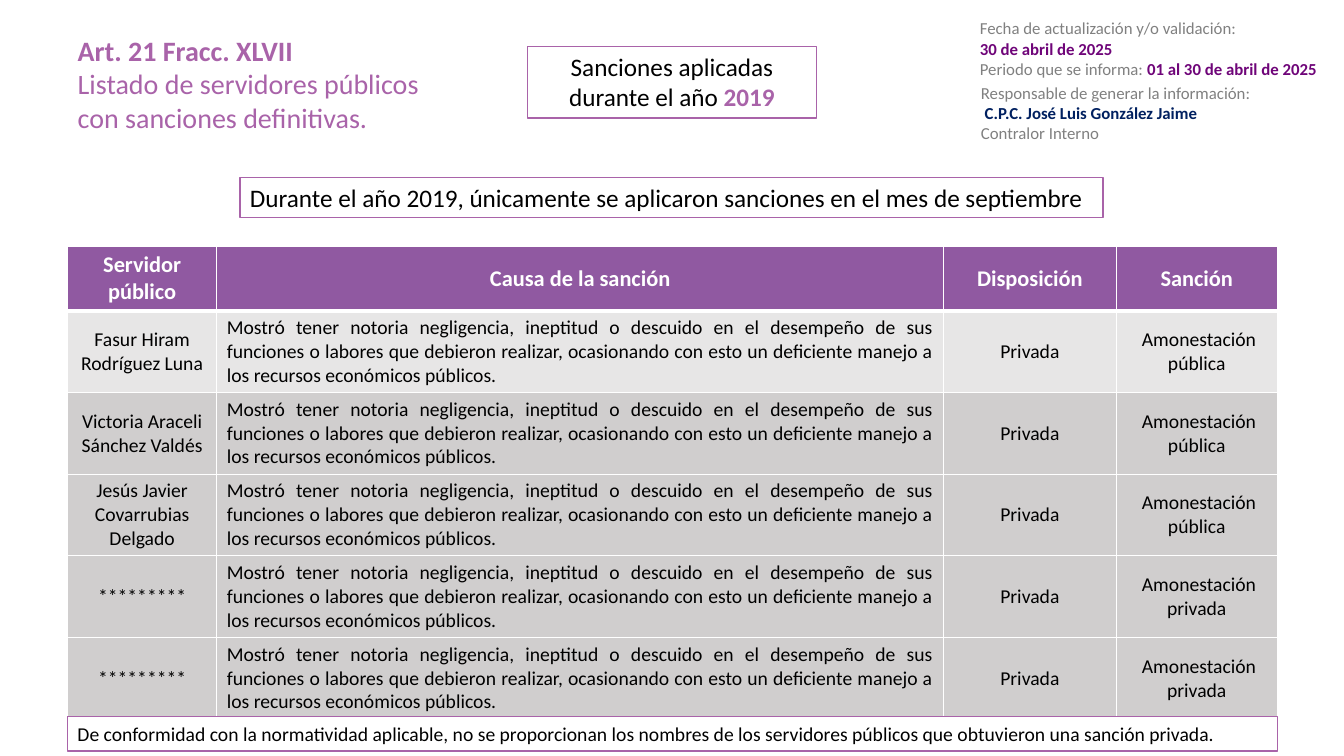
"""Builds the slide that lists the sanctions applied to public servants in 2019."""
from dataclasses import dataclass

from lxml.etree import SubElement as Sub
from pptx import Presentation
from pptx.dml.color import RGBColor as RGB
from pptx.enum.shapes import MSO_SHAPE as Shape
from pptx.enum.text import MSO_ANCHOR as Anchor, MSO_AUTO_SIZE as Auto, PP_ALIGN as Align
from pptx.oxml.ns import qn
from pptx.util import Inches, Pt


@dataclass(frozen=True)
class Theme:
    """Colours, type sizes and font of the slide."""
    font: str = "Calibri"
    white: str = "FFFFFF"
    black: str = "000000"
    mauve: str = "A963A9"
    head: str = "9059A1"
    pale: str = "E7E6E6"
    mid: str = "D0CECE"
    gray: str = "808080"
    plum: str = "6F0579"
    navy: str = "002060"
    title: int = 20
    lead: int = 18
    label: int = 16
    body: int = 14
    small: int = 12


T = Theme()

TITLE = [
    [("Art. 21 Fracc. XLVII", T.mauve, True)],
    [("Listado de servidores públicos con sanciones definitivas.", T.mauve, False)],
]
BOXES = [
    ((2.38, 1.76, 8.56, 0.4), T.lead, Align.LEFT, [[
        ("Durante el año 2019, únicamente se aplicaron sanciones en el mes de septiembre",
         T.black, False)]]),
    ((0.67, 7.11, 12, 0.34), T.body, Align.LEFT, [[
        ("De conformidad con la normatividad aplicable, no se proporcionan los nombres de "
         "los servidores públicos que obtuvieron una sanción privada.", T.black, False)]]),
    ((5.23, 0.46, 2.87, 0.71), T.lead, Align.CENTER, [[
        ("Sanciones aplicadas durante el año ", T.black, False), ("2019", T.mauve, True)]]),
]
NOTES = [
    ((9.62, 0.13, 3.59, 0.71), False, [
        [("Fecha de actualización y/o validación:", T.gray, False)],
        [("30 de abril de 2025", T.plum, True)],
        [("Periodo que se informa: ", T.gray, False),
         ("01 al 30 de abril de 2025", T.plum, True)]]),
    ((9.63, 0.77, 3.11, 1.54), True, [
        [("Responsable de generar la información:", T.gray, False)],
        [(" ", T.gray, False), ("C.P.C. José Luis González Jaime", T.navy, True)],
        [("Contralor Interno", T.gray, False)]]),
]
HEADS = ["Servidor público", "Causa de la sanción", "Disposición", "Sanción"]
CAUSE = ("Mostró tener notoria negligencia, ineptitud o descuido en el desempeño de sus "
         "funciones o labores que debieron realizar, ocasionando con esto un deficiente "
         "manejo a los recursos económicos públicos.")
CASES = [
    ("Fasur Hiram Rodríguez Luna", "pública"),
    ("Victoria Araceli Sánchez Valdés", "pública"),
    ("Jesús Javier Covarrubias Delgado", "pública"),
    ("*********", "privada"),
    ("*********", "privada"),
]
GRID = (0.67, 2.44, 12, 4.64)
WIDTHS = [1.48, 7.21, 1.71, 1.6]
HEIGHTS = [0.64] + [0.8] * len(CASES)


def apply(obj, form):
    for name, value in form.items():
        setattr(obj, name, value)


def place(box):
    return [Inches(x) for x in box]


def paint(fill, tone):
    fill.solid()
    fill.fore_color.rgb = RGB.from_string(tone)


def write(frame, paras, size, align=Align.LEFT, **form):
    apply(frame, form)
    for i, runs in enumerate(paras):
        para = frame.add_paragraph() if i else frame.paragraphs[0]
        para.alignment = align
        for text, tone, bold in runs:
            run = para.add_run()
            run.text = text
            apply(run.font, {"name": T.font, "size": Pt(size), "bold": bold})
            run.font.color.rgb = RGB.from_string(tone)


def edge(cell, sides):
    props = cell._tc.get_or_add_tcPr()
    for side, width in sides.items():
        line = Sub(props, qn(f"a:ln{side}"), w=str(Pt(width)))
        Sub(Sub(line, qn("a:solidFill")), qn("a:srgbClr"), val=T.white)


def add_title(slide):
    title = slide.shapes.title
    apply(title, dict(zip(("left", "top", "width", "height"), place((0.67, 0.28, 3.85, 1.45)))))
    write(title.text_frame, TITLE, T.title, vertical_anchor=Anchor.TOP,
          auto_size=Auto.NONE, word_wrap=True)


def add_grid(slide):
    table = slide.shapes.add_table(len(HEIGHTS), len(WIDTHS), *place(GRID)).table
    for col, width in zip(table.columns, WIDTHS):
        col.width = Inches(width)
    for row, height in zip(table.rows, HEIGHTS):
        row.height = Inches(height)
    rows = [HEADS] + [(who, CAUSE, "Privada", f" Amonestación {kind}") for who, kind in CASES]
    for r, texts in enumerate(rows):
        top = r == 0
        tone = T.head if top else T.pale if r == 1 else T.mid
        ink, size = (T.white, T.label) if top else (T.black, T.body)
        for c, text in enumerate(texts):
            cell = table.cell(r, c)
            edge(cell, {"L": 1, "R": 1, "T": 3 if r == 1 else 1, "B": 3 if top else 1})
            paint(cell.fill, tone)
            cell.vertical_anchor = Anchor.MIDDLE
            align = Align.JUSTIFY if c == 1 and not top else Align.CENTER
            write(cell.text_frame, [[(text, ink, top)]], size, align)


def add_boxes(slide):
    for box, size, align, paras in BOXES:
        shape = slide.shapes.add_shape(Shape.RECTANGLE, *place(box))
        shape.shadow.inherit = False
        paint(shape.fill, T.white)
        paint(shape.line.fill, T.mauve)
        shape.line.width = Pt(1)
        write(shape.text_frame, paras, size, align, vertical_anchor=Anchor.TOP,
              word_wrap=True)


def add_notes(slide):
    for box, wrap, paras in NOTES:
        frame = slide.shapes.add_textbox(*place(box)).text_frame
        write(frame, paras, T.small, word_wrap=wrap)


def main():
    deck = Presentation()
    apply(deck, {"slide_width": Inches(13.33), "slide_height": Inches(7.5)})
    slide = deck.slides.add_slide(deck.slide_layouts[5])
    for add in (add_title, add_grid, add_boxes, add_notes):
        add(slide)
    deck.save("out.pptx")


if __name__ == "__main__":
    main()
